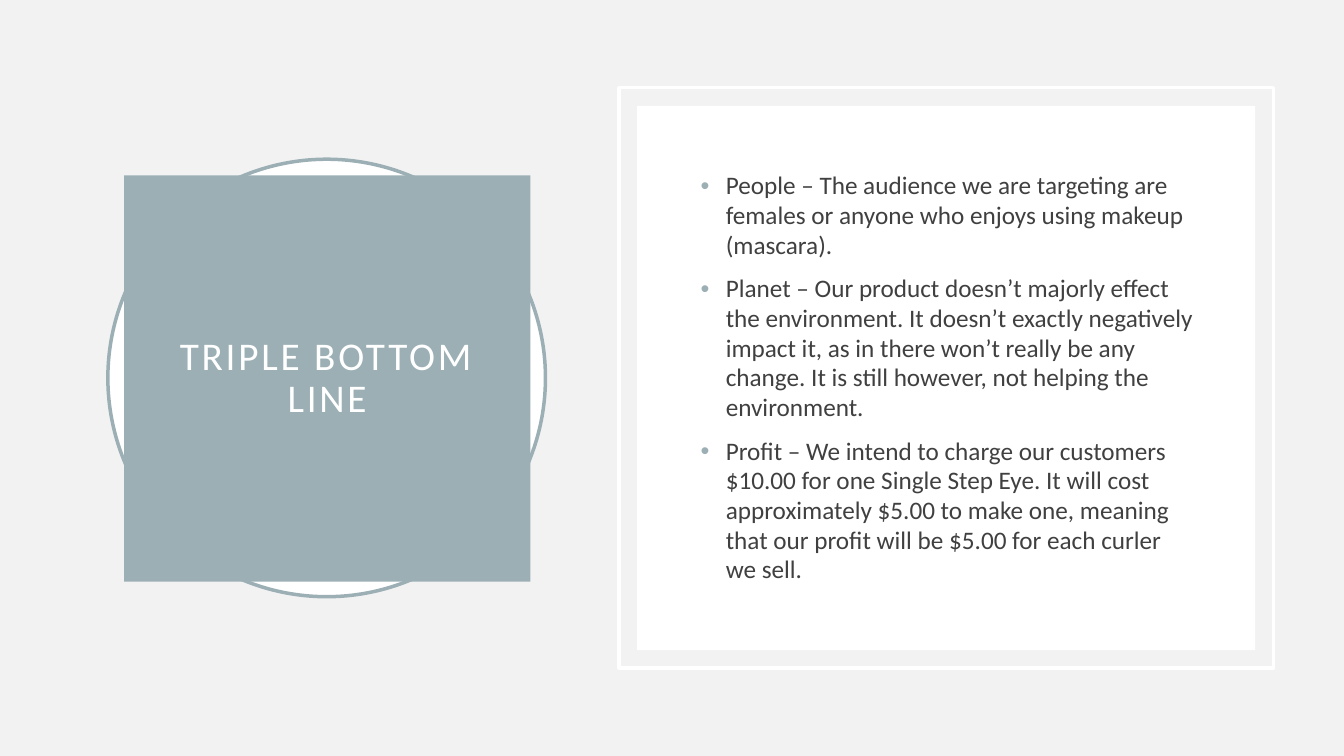
from pptx import Presentation
from pptx.dml.color import RGBColor
from pptx.enum.shapes import MSO_SHAPE
from pptx.enum.text import MSO_ANCHOR, PP_ALIGN
from pptx.oxml import parse_xml
from pptx.oxml.ns import nsdecls
from pptx.util import Inches, Pt

OVAL = MSO_SHAPE.OVAL
RECTANGLE = MSO_SHAPE.RECTANGLE
MIDDLE = MSO_ANCHOR.MIDDLE
CENTER = PP_ALIGN.CENTER

ACCENT = "9BAFB5"
WHITE = "FFFFFF"
BACKGROUND = "F2F2F2"
BODY_COLOR = "404040"

POINTS = [
    "People – The audience we are targeting are females or anyone who enjoys "
    "using makeup (mascara).",
    "Planet – Our product doesn’t majorly effect the environment. It doesn’t "
    "exactly negatively impact it, as in there won’t really be any change. "
    "It is still however, not helping the environment.",
    "Profit – We intend to charge our customers $10.00 for one Single Step Eye. "
    "It will cost approximately $5.00 to make one, meaning that our profit "
    "will be $5.00 for each curler we sell.",
]


def color(value):
    return RGBColor.from_string(value)


def apply_format(target, values):
    for name, value in values.items():
        setattr(target, name, value)


class SlideBuilder:
    font_name = "Calibri"
    line_width = Pt(2.5)

    def __init__(self, presentation):
        self.slide = presentation.slides.add_slide(presentation.slide_layouts[5])
        self.paint(self.slide.background.fill, BACKGROUND)

    def paint(self, fill, value):
        if value is None:
            fill.background()
        else:
            fill.solid()
            fill.fore_color.rgb = color(value)

    def place(self, shape, box):
        names = ("left", "top", "width", "height")
        apply_format(shape, dict(zip(names, map(Inches, box))))

    def format_font(self, font, size, value):
        apply_format(font, {"name": self.font_name, "size": Pt(size), "bold": False})
        font.color.rgb = color(value)

    def shape(self, kind, box, fill=None, line=None):
        shape = self.slide.shapes.add_shape(kind, *map(Inches, box))
        shape.shadow.inherit = False
        self.paint(shape.fill, fill)
        self.paint(shape.line.fill, line)
        if line:
            shape.line.width = self.line_width

    def title(self, text, box):
        title = self.slide.shapes.title
        self.place(title, box)
        self.paint(title.fill, ACCENT)
        margins = ("margin_left", "margin_top", "margin_right", "margin_bottom")
        apply_format(title.text_frame, {
            **dict.fromkeys(margins, Inches(0.2)),
            "word_wrap": True,
            "vertical_anchor": MIDDLE,
        })
        paragraph = title.text_frame.paragraphs[0]
        apply_format(paragraph, {"alignment": CENTER, "line_spacing": 0.9})
        run = paragraph.add_run()
        run.text = text
        self.format_font(run.font, 28, WHITE)
        run.font._element.set("spc", "200")

    def bullets(self, texts, box):
        frame = self.slide.shapes.add_textbox(*map(Inches, box)).text_frame
        apply_format(frame, {"word_wrap": True, "vertical_anchor": MIDDLE})
        for index, text in enumerate(texts):
            paragraph = frame.add_paragraph() if index else frame.paragraphs[0]
            apply_format(paragraph, {"space_before": Pt(10), "line_spacing": 0.98})
            run = paragraph.add_run()
            run.text = text
            self.format_font(run.font, 18, BODY_COLOR)
            self.add_bullet(paragraph)

    def add_bullet(self, paragraph):
        properties = paragraph._p.get_or_add_pPr()
        properties.set("marL", str(Inches(0.25)))
        properties.set("indent", str(-Inches(0.25)))
        for xml in (
            f'<a:buClr {nsdecls("a")}><a:srgbClr val="{ACCENT}"/></a:buClr>',
            f'<a:buFont {nsdecls("a")} typeface="Arial"/>',
            f'<a:buChar {nsdecls("a")} char="•"/>',
        ):
            properties.append(parse_xml(xml))


def main():
    presentation = Presentation()
    apply_format(presentation, {"slide_width": Inches(13.33), "slide_height": Inches(7.5)})
    builder = SlideBuilder(presentation)
    builder.shape(OVAL, (1.07, 1.58, 4.34, 4.34), WHITE, ACCENT)
    builder.title("TRIPLE BOTTOM LINE", (1.23, 1.74, 4.03, 4.03))
    shapes = builder.slide.shapes
    shapes._spTree.append(shapes.title._element)
    builder.shape(RECTANGLE, (6.14, 0.87, 6.49, 5.76), line=WHITE)
    builder.shape(RECTANGLE, (6.32, 1.05, 6.13, 5.4), WHITE)
    builder.bullets(POINTS, (6.85, 1.58, 5.09, 4.34))
    presentation.save("out.pptx")


if __name__ == "__main__":
    main()
